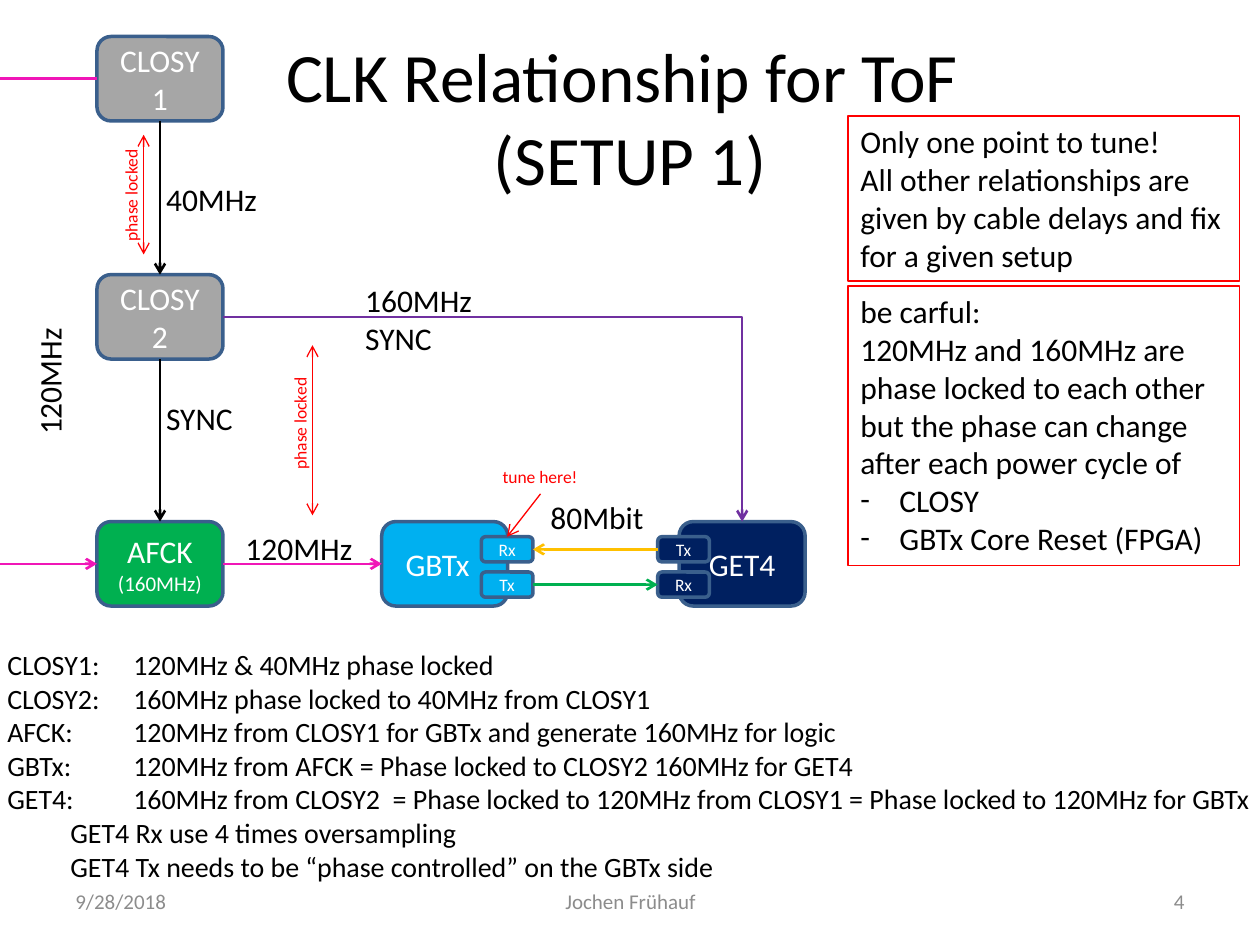
from lxml import etree
from pptx import Presentation
from pptx import util as u
from pptx.dml.color import RGBColor
from pptx.enum import shapes, text
from pptx.oxml.ns import qn

COLORS = {
    "black": "000000", "white": "FFFFFF", "footer": "8C8C8C", "outline": "3A5F8C",
    "grey": "A6A6A6", "green": "00B050", "sky": "00B0F0", "navy": "002060",
    "pink": "F016B7", "purple": "7030A0", "amber": "FFC000", "red": "FF0000",
}
TITLE = "CLK Relationship for ToF \v(SETUP 1)"

# Block grid: left edges, top edges and block size
COLUMNS = [0.77, 3.03, 5.39]
ROWS = [0.29, 2.18, 4.14]
BLOCK_W, BLOCK_H = 1.0, 0.67
PORT_W, PORT_H = 0.41, 0.2
PORT_ROWS = [4.26, 4.54]
GBTX_PORT_X, GET4_PORT_X = 3.82, 5.22

BLOCKS = [  # column, row, fill, lines with sizes
    (0, 0, "grey", [("CLOSY1", 18)]),
    (0, 1, "grey", [("CLOSY2", 18)]),
    (0, 2, "green", [("AFCK", 18), ("(160MHz)", 12)]),
    (1, 2, "sky", [("GBTx  ", 18)]),
    (2, 2, "navy", [("GET4", 18)]),
]
PORTS = [  # left, fill, names from top to bottom
    (GBTX_PORT_X, "sky", ["Rx", "Tx"]),
    (GET4_PORT_X, "navy", ["Tx", "Rx"]),
]
LABELS = [  # box, lines, size, colour, rotation
    ((1.22, 1.38, 0.93, 0.4), ["40MHz"], 18, "black", 0),
    ((1.22, 3.12, 0.74, 0.4), ["SYNC"], 18, "black", 0),
    ((1.85, 4.15, 1.06, 0.4), ["120MHz"], 18, "black", 0),
    ((-0.14, 2.82, 1.06, 0.4), ["120MHz"], 18, "black", 270),
    ((2.8, 2.18, 1.06, 0.71), ["160MHz", "SYNC"], 18, "black", 0),
    ((4.27, 3.9, 0.95, 0.4), ["80Mbit"], 18, "black", 0),
    ((3.89, 3.65, 0.81, 0.27), ["tune here!"], 10, "red", 0),
    ((0.57, 1.41, 0.94, 0.27), ["phase locked"], 10, "red", 270),
    ((1.91, 3.22, 0.94, 0.27), ["phase locked"], 10, "red", 270),
]
NOTES = [  # top, height, paragraphs, bullets
    (0.92, 1.31, ["Only one point to tune!",
                  "All other relationships are given by cable delays and fix for a given setup"], []),
    (2.27, 2.22, ["be carful:",
                  "120MHz and 160MHz are phase locked to each other but the phase can "
                  "change after each power cycle of"], ["CLOSY", "GBTx Core Reset (FPGA)"]),
]
SUMMARY = [
    "CLOSY1: \t120MHz & 40MHz phase locked",
    "CLOSY2: \t160MHz phase locked to 40MHz from CLOSY1",
    "AFCK:\t120MHz from CLOSY1 for GBTx and generate 160MHz for logic",
    "GBTx:\t120MHz from AFCK = Phase locked to CLOSY2 160MHz for GET4",
    "GET4:\t160MHz from CLOSY2  = Phase locked to 120MHz from CLOSY1 = Phase locked to 120MHz for GBTx",
    "\tGET4 Rx use 4 times oversampling",
    "\tGET4 Tx needs to be “phase controlled” on the GBTx side",
]
FOOTER = [  # left, width, text, alignment
    (0.5, 2.33, "9/28/2018", "LEFT"),
    (3.42, 3.17, "Jochen Frühauf", "CENTER"),
    (7.17, 2.33, "4", "RIGHT"),
]


def color(name):
    return RGBColor.from_string(COLORS[name])


def write(shape, lines, size=18, ink="black", align="LEFT", anchor="TOP", wrap=True, bullets=()):
    """Fill a shape with lines; a line is a string or a (string, size) pair."""
    frame = shape.text_frame
    frame.word_wrap = wrap
    frame.vertical_anchor = text.MSO_ANCHOR[anchor]
    for index, line in enumerate([*lines, *bullets]):
        words, points = line if isinstance(line, tuple) else (line, size)
        paragraph = frame.paragraphs[0] if index == 0 else frame.add_paragraph()
        paragraph.text = words
        paragraph.alignment = text.PP_ALIGN[align]
        if index >= len(lines):
            properties = paragraph._p.get_or_add_pPr()
            indent = u.Inches(0.31)
            properties.set("marL", str(indent))
            properties.set("indent", str(-indent))
            etree.SubElement(properties, qn("a:buFont"), typeface="Calibri")
            etree.SubElement(properties, qn("a:buChar"), char="-")
        for run in paragraph.runs:
            run.font.name = "Calibri"
            run.font.size = u.Pt(points)
            run.font.color.rgb = color(ink)


def add_box(slide, kind, box, fill=None, outline="outline", width=2):
    shape = slide.shapes.add_shape(shapes.MSO_SHAPE[kind], *map(u.Inches, box))
    shape.shadow.inherit = False
    if fill:
        shape.fill.solid()
        shape.fill.fore_color.rgb = color(fill)
    else:
        shape.fill.background()
    shape.line.color.rgb = color(outline)
    shape.line.width = u.Pt(width)
    return shape


def add_label(slide, box, lines, rotation=0, **format):
    label = slide.shapes.add_textbox(*map(u.Inches, box))
    label.rotation = rotation
    write(label, lines, **format)


def add_wire(slide, start, end, ink, width=1.5, ends=("tailEnd",), corner=False):
    kind = shapes.MSO_CONNECTOR.ELBOW if corner else shapes.MSO_CONNECTOR.STRAIGHT
    wire = slide.shapes.add_connector(kind, *map(u.Inches, (*start, *end)))
    wire.line.color.rgb = color(ink)
    wire.line.width = u.Pt(width)
    properties = wire._element.spPr
    if corner:
        properties.find(qn("a:prstGeom")).set("prst", "bentConnector2")
    for name in ends:
        etree.SubElement(wire.line._get_or_add_ln(), qn("a:" + name), type="arrow")
    etree.SubElement(properties, qn("a:effectLst"))


def main():
    presentation = Presentation()
    presentation.slide_width, presentation.slide_height = u.Inches(10), u.Inches(7.5)
    slide = presentation.slides.add_slide(presentation.slide_layouts[5])

    # Title and footer
    title = slide.shapes.title
    title.left, title.top, title.width, title.height = map(u.Inches, (0.5, 0.3, 9, 1.25))
    write(title, [TITLE], size=39.6, align="CENTER", anchor="MIDDLE")
    for left, width, words, align in FOOTER:
        add_label(slide, (left, 6.95, width, 0.4), [words], size=12, ink="footer",
                  align=align, anchor="MIDDLE")

    # Blocks and their ports
    for column, row, fill, lines in BLOCKS:
        block = add_box(slide, "FLOWCHART_ALTERNATE_PROCESS",
                        (COLUMNS[column], ROWS[row], BLOCK_W, BLOCK_H), fill)
        write(block, lines, ink="white", align="CENTER", anchor="MIDDLE")
    for left, fill, names in PORTS:
        for top, name in zip(PORT_ROWS, names):
            port = add_box(slide, "ROUNDED_RECTANGLE", (left, top, PORT_W, PORT_H), fill)
            write(port, [name], size=10, ink="white", align="CENTER", anchor="MIDDLE", wrap=False)

    # Clock wires between the blocks
    center_x = [left + BLOCK_W / 2 for left in COLUMNS]
    center_y = [top + BLOCK_H / 2 for top in ROWS]
    right = COLUMNS[0] + BLOCK_W
    for upper, lower in zip(ROWS, ROWS[1:]):
        add_wire(slide, (center_x[0], upper + BLOCK_H), (center_x[0], lower), "black")
    add_wire(slide, (right, center_y[2]), (COLUMNS[1], center_y[2]), "pink")
    add_wire(slide, (right, center_y[1]), (center_x[2], ROWS[2]), "purple", corner=True)
    add_wire(slide, (0, center_y[0]), (COLUMNS[0], center_y[0]), "pink", ends=())
    add_wire(slide, (0, center_y[2]), (COLUMNS[0], center_y[2]), "pink")

    # Data wires between the ports
    upper, lower = [top + PORT_H / 2 for top in PORT_ROWS]
    port_right = GBTX_PORT_X + PORT_W
    add_wire(slide, (GET4_PORT_X, upper), (port_right, upper), "amber")
    add_wire(slide, (port_right, lower), (GET4_PORT_X, lower), "green")

    # Red phase and tuning markers
    both = ("headEnd", "tailEnd")
    add_wire(slide, (1.14, 1.07), (1.14, 2.02), "red", width=0.75, ends=both)
    add_wire(slide, (2.48, 4.09), (2.48, 2.74), "red", width=0.75, ends=both)
    add_wire(slide, (4.29, 3.92), (GBTX_PORT_X + PORT_W / 2, PORT_ROWS[0]), "red", width=0.75)

    # Labels, notes and summary
    for box, lines, size, ink, rotation in LABELS:
        add_label(slide, box, lines, rotation, size=size, ink=ink, wrap=False)
    for top, height, lines, bullets in NOTES:
        note = add_box(slide, "RECTANGLE", (6.73, top, 3.11, height), outline="red", width=0.75)
        write(note, lines, bullets=bullets)
    add_label(slide, (-0.04, 5.09, 10.14, 2.29), SUMMARY, size=16, wrap=False)

    presentation.save("out.pptx")


if __name__ == "__main__":
    main()
